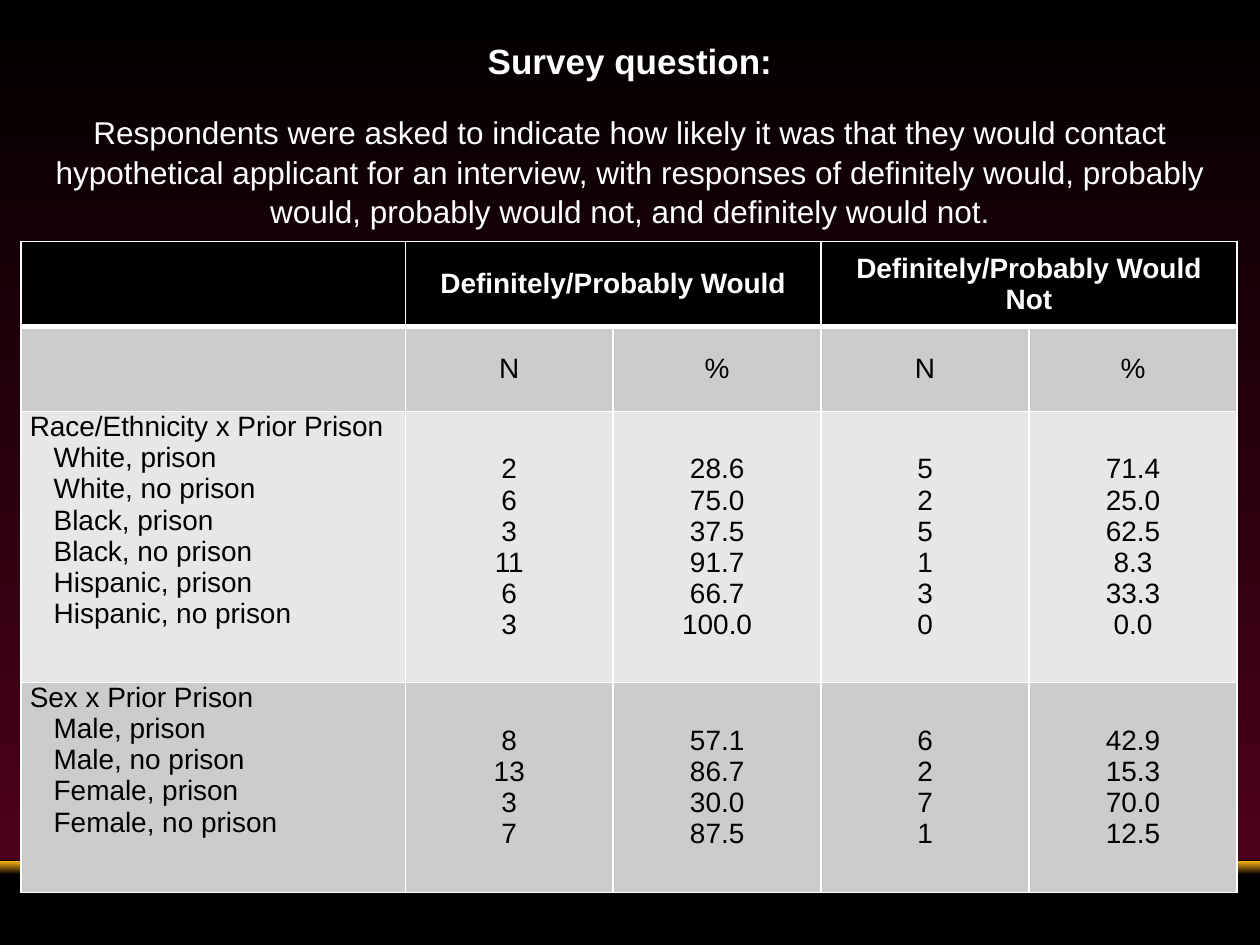
from pptx import Presentation
from pptx.dml.color import RGBColor as RGB
from pptx.enum.shapes import MSO_SHAPE as Shape
from pptx.enum.text import MSO_ANCHOR as Anchor, MSO_AUTO_SIZE as AutoSize, PP_ALIGN as Align
from pptx.oxml import parse_xml
from pptx.oxml.ns import nsdecls
from pptx.util import Inches, Pt

BLACK = RGB(0x00, 0x00, 0x00)
WHITE = RGB(0xFF, 0xFF, 0xFF)
WINE = RGB(0x54, 0x00, 0x1C)
GOLD = RGB(0xFF, 0xAF, 0x18)
GREY = RGB(0xCC, 0xCC, 0xCC)
PALE = RGB(0xE7, 0xE7, 0xE7)

COLUMNS = [36.6] + [19.8] * 4
ROWS = [8.1, 8.1, 25.8, 20]
ROW_FILLS = [BLACK, GREY, PALE, GREY]
HEADERS = {1: "Definitely/Probably Would", 3: "Definitely/Probably Would Not"}
MEASURES = ["N", "%", "N", "%"]
GROUPS = [
    ("Race/Ethnicity x Prior Prison", [
        ("White, prison", "2", "28.6", "5", "71.4"),
        ("White, no prison", "6", "75.0", "2", "25.0"),
        ("Black, prison", "3", "37.5", "5", "62.5"),
        ("Black, no prison", "11", "91.7", "1", "8.3"),
        ("Hispanic, prison", "6", "66.7", "3", "33.3"),
        ("Hispanic, no prison", "3", "100.0", "0", "0.0"),
    ]),
    ("Sex x Prior Prison", [
        ("Male, prison", "8", "57.1", "6", "42.9"),
        ("Male, no prison", "13", "86.7", "2", "15.3"),
        ("Female, prison", "3", "30.0", "7", "70.0"),
        ("Female, no prison", "7", "87.5", "1", "12.5"),
    ]),
]
QUESTION = (
    "Respondents were asked to indicate how likely it was that they would contact "
    "hypothetical applicant for an interview, with responses of definitely would, "
    "probably would, probably would not, and definitely would not."
)


def write(tf, lines, size=16, color=BLACK, bold=False, align=Align.CENTER, spacing=1.0, indent=0):
    """Fill a text frame with one paragraph per line, indenting all but the first."""
    for i, line in enumerate(lines):
        p = tf.paragraphs[0] if i == 0 else tf.add_paragraph()
        if i and indent:
            p._p.get_or_add_pPr().set("marL", str(Inches(indent)))
        p.alignment, p.line_spacing = align, spacing
        p.space_before = p.space_after = Pt(0)
        r = p.add_run()
        r.text = line
        r.font.name, r.font.size, r.font.bold = "Arial", Pt(size), bold
        r.font.color.rgb = color


class Deck:
    """Holds the current slide and its grid of 120 columns by 90 rows."""

    def __init__(self):
        self.prs = Presentation()
        self.prs.slide_width, self.prs.slide_height = Inches(10), Inches(7.5)
        self.slide = self.prs.slides.add_slide(self.prs.slide_layouts[5])
        self.unit = self.prs.slide_width / 120

    def grid(self, *cells):
        """Turn grid counts into lengths."""
        return [round(n * self.unit) for n in cells]

    def gradient(self, fill, top, bottom):
        """Shade a fill from top to bottom."""
        fill.gradient()
        fill.gradient_angle = 270
        for stop, color in zip(fill.gradient_stops, (top, bottom)):
            stop.color.rgb = color

    def band(self, *box):
        """Add a black rectangle and return it."""
        sp = self.slide.shapes.add_shape(Shape.RECTANGLE, *self.grid(*box))
        sp.shadow.inherit = False
        sp.fill.solid()
        sp.fill.fore_color.rgb = BLACK
        sp.line.color.rgb, sp.line.width = BLACK, Pt(0.75)
        return sp

    def title(self, text, *box):
        """Place and fill the title."""
        sp = self.slide.shapes.title
        sp.left, sp.top, sp.width, sp.height = self.grid(*box)
        tf = sp.text_frame
        tf.auto_size, tf.vertical_anchor = AutoSize.NONE, Anchor.TOP
        write(tf, [text], size=20, color=WHITE, bold=True, spacing=0.9)

    def text(self, text, *box):
        """Add a wrapped text box."""
        tf = self.slide.shapes.add_textbox(*self.grid(*box)).text_frame
        tf.word_wrap, tf.auto_size = True, AutoSize.SHAPE_TO_FIT_TEXT
        write(tf, [text], size=18, color=WHITE, spacing=1.05)

    def cell_style(self, cell, fill, top, bottom):
        """Give a cell white borders, margins and a fill."""
        tc_pr = cell._tc.get_or_add_tcPr()
        for side, width in zip("LRTB", (1, 1, top, bottom)):
            tc_pr.append(parse_xml(
                f'<a:ln{side} {nsdecls("a")} w="{Pt(width)}"><a:solidFill>'
                f'<a:srgbClr val="{WHITE}"/></a:solidFill></a:ln{side}>'))
        cell.fill.solid()
        cell.fill.fore_color.rgb = fill
        cell.margin_left = cell.margin_right = Inches(0.07)
        cell.margin_top = cell.margin_bottom = 0
        cell.vertical_anchor = Anchor.MIDDLE

    def table(self, *box):
        """Add the survey results."""
        frame = self.slide.shapes.add_table(len(ROWS), len(COLUMNS), *self.grid(*box))
        table = frame.table
        table.first_row = table.horz_banding = False
        for column, width in zip(table.columns, self.grid(*COLUMNS)):
            column.width = width
        for row, height in zip(table.rows, self.grid(*ROWS)):
            row.height = height
        for i, fill in enumerate(ROW_FILLS):
            for j in range(len(COLUMNS)):
                self.cell_style(table.cell(i, j), fill, 3 if i == 1 else 1, 3 if i == 0 else 1)
        for j, header in HEADERS.items():
            table.cell(0, j).merge(table.cell(0, j + 1))
            write(table.cell(0, j).text_frame, [header], color=WHITE, bold=True)
        for j, measure in enumerate(MEASURES, 1):
            write(table.cell(1, j).text_frame, [measure])
        for i, (heading, records) in enumerate(GROUPS, 2):
            labels, *values = zip(*records)
            table.cell(i, 0).vertical_anchor = Anchor.TOP
            write(table.cell(i, 0).text_frame, [heading, *labels], align=Align.LEFT, indent=0.19)
            for j, column in enumerate(values, 1):
                write(table.cell(i, j).text_frame, column)


def main():
    """Build the slide and save it."""
    deck = Deck()
    deck.gradient(deck.slide.background.fill, BLACK, WINE)
    deck.band(0, 82, 120, 8)
    strip = deck.band(0, 82, 120, 1.3)
    deck.gradient(strip.fill, GOLD, BLACK)
    strip.line.fill.background()
    deck.title("Survey question:", 2, 3.6, 116, 5.4)
    deck.table(2, 23, 116, 62)
    deck.text(QUESTION, 3, 10, 114, 12.1)
    deck.prs.save("out.pptx")


if __name__ == "__main__":
    main()
